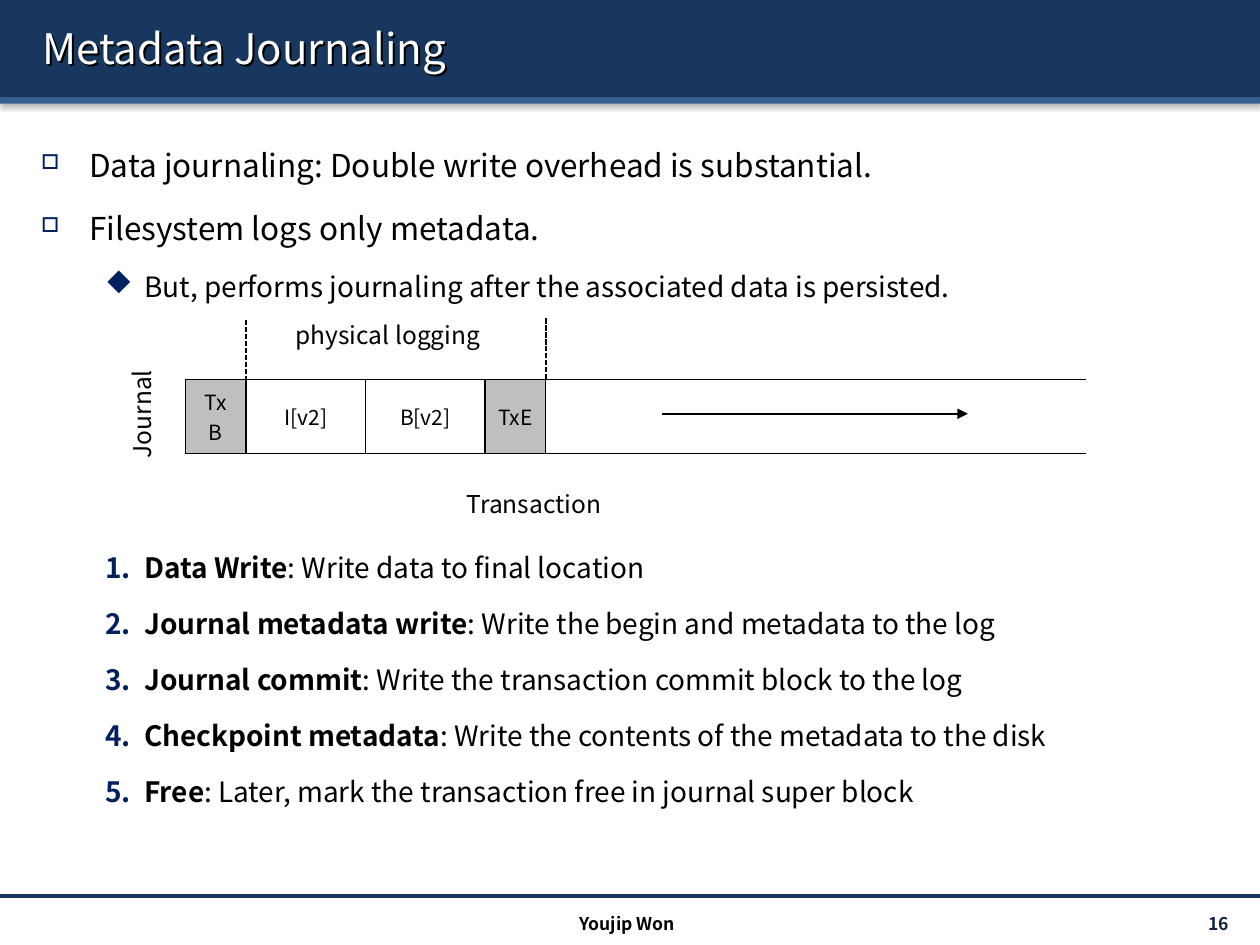
from typing import NamedTuple

from lxml.etree import SubElement
from pptx import Presentation
from pptx.dml.color import RGBColor
from pptx.enum.dml import MSO_LINE_DASH_STYLE as Dash
from pptx.enum.shapes import MSO_CONNECTOR as Conn, MSO_SHAPE as Shape
from pptx.enum.text import MSO_ANCHOR as Anchor, PP_ALIGN as Align
from pptx.oxml.ns import qn
from pptx.util import Cm, Pt

FONT = "Noto Sans CJK KR"
NAVY = RGBColor(0x17, 0x37, 0x5E)
BLUE = RGBColor(0x37, 0x60, 0x92)
BULLET = RGBColor(0x00, 0x20, 0x60)
PAGE = RGBColor(0x0F, 0x24, 0x3E)
GRAY = RGBColor(0xBF, 0xBF, 0xBF)
WHITE = RGBColor(0xFF, 0xFF, 0xFF)
BLACK = RGBColor(0x00, 0x00, 0x00)


class Box(NamedTuple):
    left: float
    top: float
    width: float
    height: float


class Label(NamedTuple):
    text: str
    box: Box
    size: int = 14
    color: RGBColor = BLACK
    bold: bool = False
    align: Align = Align.LEFT
    anchor: Anchor = Anchor.TOP
    rotation: int = 0


class Level(NamedTuple):
    size: int
    margin: float
    indent: float
    before: float
    bullet: str
    scale: int = 100


class Item(NamedTuple):
    level: Level
    text: str
    lead: str = ""


class Line(NamedTuple):
    x1: float
    y1: float
    x2: float
    y2: float
    color: RGBColor = BLACK
    width: float = 1
    dash: Dash | None = None
    arrow: bool = False


class Block(NamedTuple):
    text: str
    width: float
    fill: RGBColor = WHITE


TOPIC = Level(18, 0.97, -0.97, 3.6, "o", 65)
DETAIL = Level(16, 2.08, -0.79, 3.2, "u")
STEP = DETAIL._replace(bullet="")

TABLE_LEFT, TABLE_TOP, TABLE_HEIGHT = 3.74, 7.65, 1.49
BLOCKS = [
    Block("TxB", 1.22, GRAY),
    Block("I[v2]", 2.41),
    Block("B[v2]", 2.41),
    Block("TxE", 1.22, GRAY),
    Block("", 10.9),
]
LOG_START = TABLE_LEFT + BLOCKS[0].width
LOG_END = TABLE_LEFT + sum(b.width for b in BLOCKS[:-1])

TITLE = Label("Metadata Journaling", Box(0.6, 0.15, 24.41, 1.63), 24, WHITE,
              anchor=Anchor.MIDDLE)
LABELS = [
    Label("16", Box(22.05, 18.31, 2.97, 0.61), 10, PAGE, True, Align.RIGHT, Anchor.MIDDLE),
    Label("Youjip Won", Box(8.43, 18.29, 8.43, 0.61), 10, bold=True, align=Align.CENTER),
    Label("Journal", Box(1.68, 7.92, 2.36, 0.86), align=Align.CENTER, rotation=270),
    Label("Transaction", Box(9.16, 9.73, 3.63, 0.86)),
    Label("physical logging", Box(5.71, 6.32, 4.39, 0.86)),
]
LINES = [
    Line(0, 18.06, 25.4, 18.06, NAVY, 2),
    Line(13.34, 8.34, 19.51, 8.34, arrow=True),
    Line(LOG_START, 6.45, LOG_START, TABLE_TOP, dash=Dash.SQUARE_DOT),
    Line(LOG_END, 6.42, LOG_END, TABLE_TOP, dash=Dash.SQUARE_DOT),
]
POINTS = [
    Item(TOPIC, "Data journaling: Double write overhead is substantial."),
    Item(TOPIC, "Filesystem logs only metadata."),
    Item(DETAIL, "But, performs journaling after the associated data is persisted."),
]
STEPS = [
    Item(STEP, ": Write data to final location", "Data Write"),
    Item(STEP, ": Write the begin and metadata to the log", "Journal metadata write"),
    Item(STEP, ": Write the transaction commit block to the log", "Journal commit"),
    Item(STEP, ": Write the contents of the metadata to the disk", "Checkpoint metadata"),
    Item(STEP, ": Later, mark the transaction free in journal super block", "Free"),
]


def style(r, size: int, color: RGBColor = BLACK, bold: bool = False) -> None:
    r.font.name, r.font.size, r.font.bold = FONT, Pt(size), bold
    r.font.color.rgb = color


def add_shadow(sp, blur: float, dist: float, angle: int, alpha: int) -> None:
    sp.shadow.inherit = False
    effects = sp._element.spPr.find(qn("a:effectLst"))
    shadow = SubElement(effects, qn("a:outerShdw"), blurRad=str(Pt(blur)),
                        dist=str(Pt(dist)), dir=str(angle * 60000), rotWithShape="0")
    color = SubElement(shadow, qn("a:srgbClr"), val=str(BLACK))
    SubElement(color, qn("a:alpha"), val=str(alpha * 1000))


def add_band(slide, box: Box, color: RGBColor) -> None:
    sp = slide.shapes.add_shape(Shape.RECTANGLE, *map(Cm, box))
    sp.fill.solid()
    sp.fill.fore_color.rgb = color
    sp.line.fill.background()
    add_shadow(sp, 3.1, 1.6, 90, 38)


def add_frame(slide, box: Box):
    sp = slide.shapes.add_textbox(*map(Cm, box))
    sp.text_frame.word_wrap = True
    return sp


def add_label(slide, label: Label):
    sp = add_frame(slide, label.box)
    sp.rotation = label.rotation
    tf = sp.text_frame
    tf.vertical_anchor = label.anchor
    tf.text = label.text
    p = tf.paragraphs[0]
    p.alignment = label.align
    style(p.runs[0], label.size, label.color, label.bold)
    return sp


def add_bullet(p, level: Level) -> None:
    pPr = p._p.get_or_add_pPr()
    pPr.set("marL", str(Cm(level.margin)))
    pPr.set("indent", str(Cm(level.indent)))
    color = SubElement(pPr, qn("a:buClr"))
    SubElement(color, qn("a:srgbClr"), val=str(BULLET))
    SubElement(pPr, qn("a:buSzPct"), val=str(level.scale * 1000))
    if level.bullet:
        SubElement(pPr, qn("a:buFont"), typeface="Wingdings", charset="2")
        SubElement(pPr, qn("a:buChar"), char=level.bullet)
    else:
        SubElement(pPr, qn("a:buAutoNum"), type="arabicPeriod")


def add_list(slide, box: Box, items: list[Item]) -> None:
    tf = add_frame(slide, box).text_frame
    for i, item in enumerate(items):
        p = tf.add_paragraph() if i else tf.paragraphs[0]
        add_bullet(p, item.level)
        p.line_spacing = 1.5
        if i:
            p.space_before = Pt(item.level.before)
        for text, bold in ((item.lead, True), (item.text, False)):
            if text:
                r = p.add_run()
                r.text = text
                style(r, item.level.size, bold=bold)


def add_line(slide, line: Line) -> None:
    cn = slide.shapes.add_connector(Conn.STRAIGHT, *map(Cm, line[:4]))
    cn.line.color.rgb = line.color
    cn.line.width = Pt(line.width)
    if line.dash:
        cn.line.dash_style = line.dash
    if line.arrow:
        SubElement(cn.line._get_or_add_ln(), qn("a:tailEnd"), type="triangle")
    SubElement(cn._element.spPr, qn("a:effectLst"))


def add_borders(cell, sides: str) -> None:
    tcPr = cell._tc.get_or_add_tcPr()
    for i, side in enumerate("LRTB"):
        ln = SubElement(tcPr, qn(f"a:ln{side}"), w=str(Pt(1)))
        if side in sides:
            fill = SubElement(ln, qn("a:solidFill"))
            SubElement(fill, qn("a:srgbClr"), val=str(BLACK))
        else:
            SubElement(ln, qn("a:noFill"))
        tcPr.insert(i, ln)


def add_journal(slide) -> None:
    width = sum(b.width for b in BLOCKS)
    table = slide.shapes.add_table(1, len(BLOCKS), Cm(TABLE_LEFT), Cm(TABLE_TOP),
                                   Cm(width), Cm(TABLE_HEIGHT)).table
    table.first_row = table.horz_banding = False
    for i, block in enumerate(BLOCKS):
        table.columns[i].width = Cm(block.width)
        cell = table.cell(0, i)
        cell.fill.solid()
        cell.fill.fore_color.rgb = block.fill
        cell.vertical_anchor = Anchor.MIDDLE
        add_borders(cell, "LRTB" if block.text else "LTB")
        if block.text:
            cell.text = block.text
            p = cell.text_frame.paragraphs[0]
            p.alignment = Align.CENTER
            style(p.runs[0], 12)


def main() -> None:
    prs = Presentation()
    prs.slide_width, prs.slide_height = Cm(25.4), Cm(19.05)
    slide = prs.slides.add_slide(prs.slide_layouts[6])
    add_band(slide, Box(0, 0, 25.4, 1.96), NAVY)
    add_band(slide, Box(0, 1.96, 25.4, 0.13), BLUE)
    add_shadow(add_label(slide, TITLE), 0, 1.6, 45, 100)
    add_list(slide, Box(0.58, 2.44, 24.41, 3.8), POINTS)
    add_list(slide, Box(0.58, 10.63, 24.41, 6.2), STEPS)
    add_journal(slide)
    for label in LABELS:
        add_label(slide, label)
    for line in LINES:
        add_line(slide, line)
    prs.save("out.pptx")


if __name__ == "__main__":
    main()
